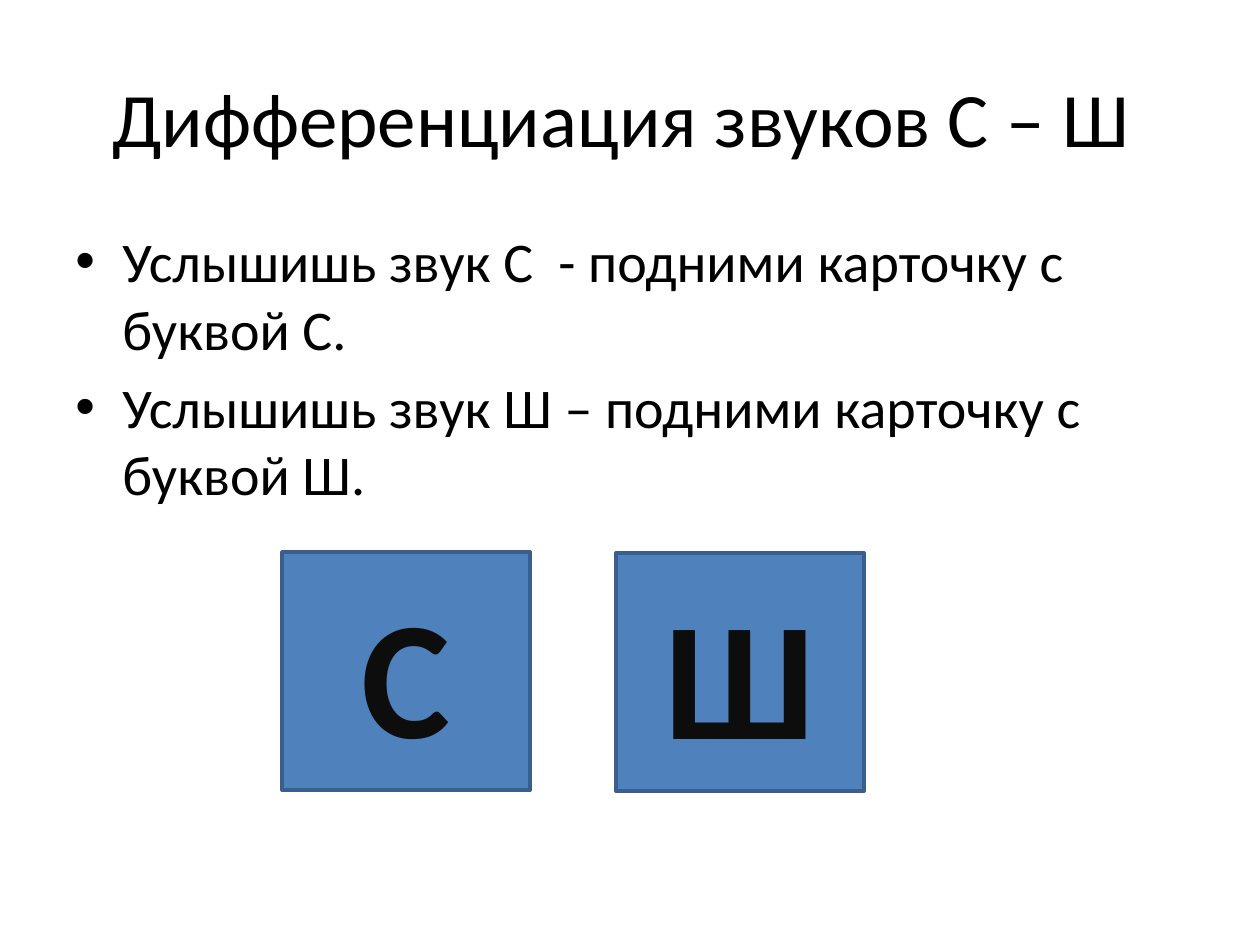
from lxml.etree import SubElement
from pptx import Presentation
from pptx.dml.color import RGBColor
from pptx.enum.shapes import MSO_SHAPE
from pptx.enum.text import MSO_ANCHOR, PP_ALIGN
from pptx.oxml.ns import qn
from pptx.util import Cm, Pt

COLORS = {"text": "000000", "card": "4F81BD", "border": "3A5F8C", "letter": "0D0D0D"}


def style(paragraph, size, color, bold=False):
    for run in paragraph.runs:
        run.font.name = "Calibri"
        run.font.size = Pt(size)
        run.font.bold = bold
        run.font.color.rgb = RGBColor.from_string(COLORS[color])


presentation = Presentation()
presentation.slide_width = Cm(25.4)
presentation.slide_height = Cm(19.05)
slide = presentation.slides.add_slide(presentation.slide_layouts[6])

title = slide.shapes.add_textbox(Cm(1.27), Cm(0.76), Cm(22.86), Cm(3.18)).text_frame
title.word_wrap = True
title.vertical_anchor = MSO_ANCHOR.MIDDLE
title.text = "Дифференциация звуков С – Ш "
title.paragraphs[0].alignment = PP_ALIGN.CENTER
style(title.paragraphs[0], 44, "text")

instructions = slide.shapes.add_textbox(Cm(1.27), Cm(4.45), Cm(22.86), Cm(12.57)).text_frame
instructions.word_wrap = True
instructions.text = (
    "Услышишь звук С  - подними карточку с буквой С.\n"
    "Услышишь звук Ш – подними карточку с буквой Ш."
)
for index, instruction in enumerate(instructions.paragraphs):
    if index:
        instruction.space_before = Pt(6.4)
    properties = instruction._p.get_or_add_pPr()
    properties.set("marL", str(Cm(0.95)))
    properties.set("indent", str(-Cm(0.95)))
    SubElement(properties, qn("a:buFont"), typeface="Arial")
    SubElement(properties, qn("a:buChar"), char="•")
    style(instruction, 32, "text")

for letter, left, top in (("С", 5.69, 11.13), ("Ш", 12.42, 11.15)):
    card = slide.shapes.add_shape(MSO_SHAPE.RECTANGLE, Cm(left), Cm(top), Cm(5), Cm(4.8))
    card.shadow.inherit = False
    card.fill.solid()
    card.fill.fore_color.rgb = RGBColor.from_string(COLORS["card"])
    card.line.color.rgb = RGBColor.from_string(COLORS["border"])
    card.line.width = Pt(2)
    card.text_frame.text = letter
    card.text_frame.vertical_anchor = MSO_ANCHOR.MIDDLE
    card.text_frame.paragraphs[0].alignment = PP_ALIGN.CENTER
    style(card.text_frame.paragraphs[0], 96, "letter", bold=True)

presentation.save("out.pptx")
